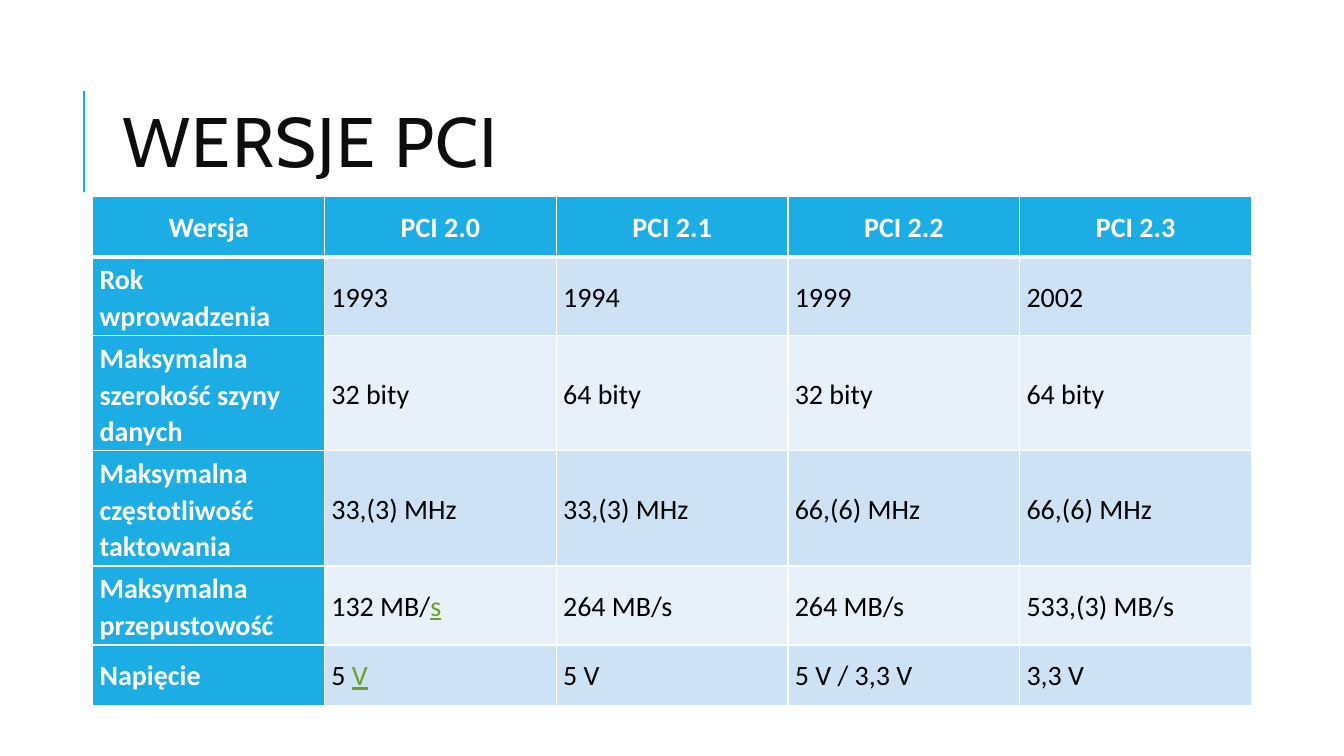
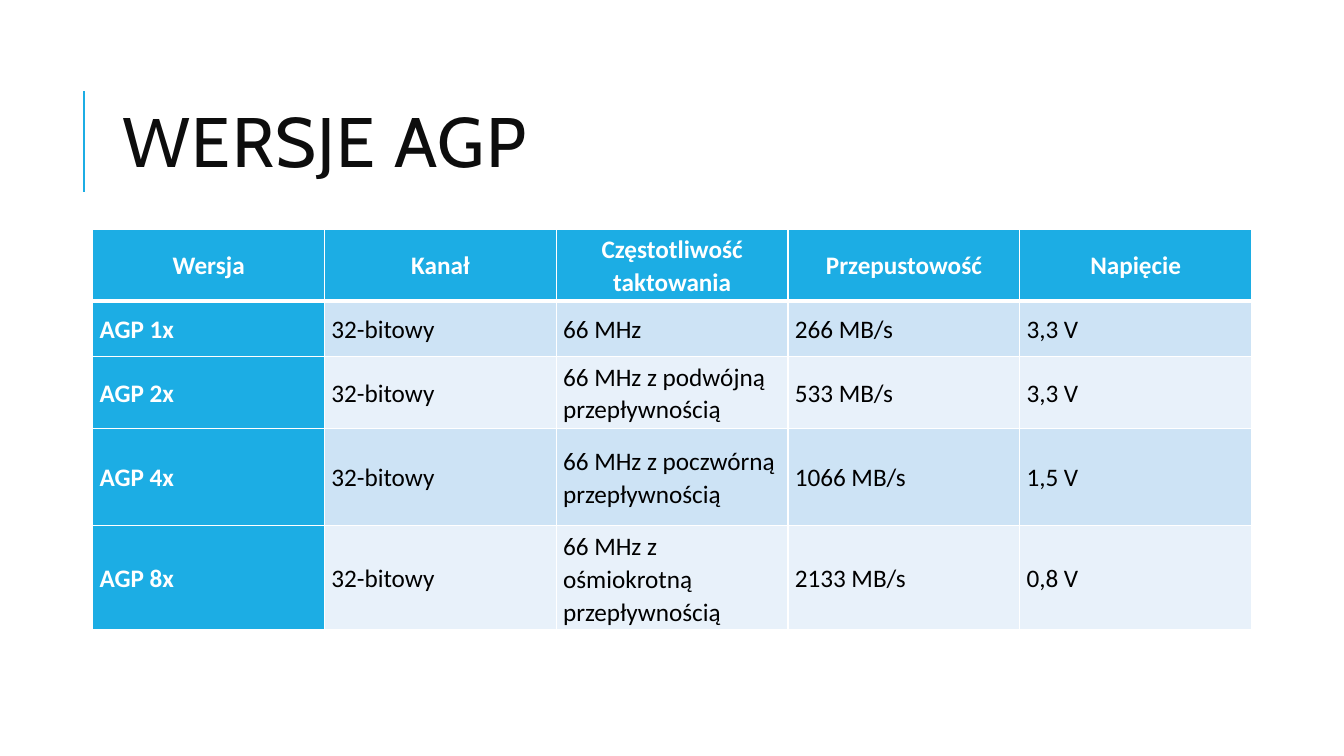
from dataclasses import dataclass

from lxml import etree
from pptx import Presentation
from pptx.dml.color import RGBColor as Rgb
from pptx.enum.shapes import MSO_CONNECTOR as Connector
from pptx.enum.text import MSO_ANCHOR as Anchor, PP_ALIGN as Align
from pptx.oxml.ns import qn
from pptx.util import Cm, Pt


@dataclass(frozen=True)
class Theme:
    accent: str = "1CADE4"
    title: str = "0D0D0D"
    body: str = "000000"
    white: str = "FFFFFF"
    marked: str = "6B9F25"
    bands: tuple = ("CDE3F5", "E8F1FA")
    title_font: str = "Cabin"
    table_font: str = "Calibri"
    title_size: int = 50


THEME = Theme()

# A tuple in a cell holds plain text followed by underlined text.
PCI_ROWS = [
    ["Wersja", "PCI 2.0", "PCI 2.1", "PCI 2.2", "PCI 2.3"],
    ["Rok wprowadzenia", "1993", "1994", "1999", "2002"],
    ["Maksymalna szerokość szyny danych", "32 bity", "64 bity", "32 bity", "64 bity"],
    ["Maksymalna częstotliwość taktowania",
     "33,(3) MHz", "33,(3) MHz", "66,(6) MHz", "66,(6) MHz"],
    ["Maksymalna przepustowość",
     ("132 MB/", "s"), "264 MB/s", "264 MB/s", "533,(3) MB/s"],
    ["Napięcie", ("5 ", "V"), "5 V", "5 V / 3,3 V", "3,3 V"],
]
AGP_ROWS = [
    ["Wersja", "Kanał", "Częstotliwość taktowania", "Przepustowość", "Napięcie"],
    ["AGP 1x", "32-bitowy", "66 MHz", "266 MB/s", "3,3 V"],
    ["AGP 2x", "32-bitowy", "66 MHz z podwójną przepływnością", "533 MB/s", "3,3 V"],
    ["AGP 4x", "32-bitowy", "66 MHz z poczwórną przepływnością", "1066 MB/s", "1,5 V"],
    ["AGP 8x", "32-bitowy", "66 MHz z ośmiokrotną przepływnością", "2133 MB/s", "0,8 V"],
]


def style_font(font, name, size, color, bold=False):
    font.name = name
    font.size = Pt(size)
    font.bold = bold
    font.color.rgb = Rgb.from_string(color)


def add_title_line(page):
    line = page.shapes.add_connector(Connector.STRAIGHT, Cm(2.11), Cm(4.83), Cm(2.11), Cm(2.29))
    line.line.color.rgb = Rgb.from_string(THEME.accent)
    line.line.width = Pt(1.5)
    etree.SubElement(line._element.spPr, qn("a:effectLst"))


def add_title(page, text):
    box = page.shapes.add_textbox(Cm(2.84), Cm(1.63), Cm(27), Cm(4.17))
    frame = box.text_frame
    frame.word_wrap = True
    frame.vertical_anchor = Anchor.MIDDLE
    para = frame.paragraphs[0]
    para.line_spacing = 0.8
    style_font(para.font, THEME.title_font, THEME.title_size, THEME.title)
    span = para.add_run()
    span.text = text
    span._r.get_or_add_rPr().set("spc", "100")


def set_borders(cell, bottom):
    """Draw white cell edges; bottom is the width of the lower one in points."""
    props = cell._tc.get_or_add_tcPr()
    widths = {"a:lnL": 1, "a:lnR": 1, "a:lnT": 1, "a:lnB": bottom}
    for position, (tag, width) in enumerate(widths.items()):
        edge = etree.Element(qn(tag), w=str(Pt(width)))
        fill = etree.SubElement(edge, qn("a:solidFill"))
        etree.SubElement(fill, qn("a:srgbClr"), val=THEME.white)
        props.insert(position, edge)


def fill_cell(cell, content, size, row, column):
    is_head = row == 0
    is_label = is_head or column == 0
    cell.vertical_anchor = Anchor.MIDDLE
    cell.margin_left = cell.margin_right = Cm(0.17)
    cell.margin_top = cell.margin_bottom = Cm(0.09)
    cell.fill.solid()
    cell.fill.fore_color.rgb = Rgb.from_string(
        THEME.accent if is_label else THEME.bands[(row - 1) % 2])
    set_borders(cell, bottom=3 if is_head else 1)

    para = cell.text_frame.paragraphs[0]
    para.alignment = Align.CENTER if is_head else Align.LEFT
    para.line_spacing = 1.07
    para.space_before = para.space_after = Pt(12)
    style_font(para.font, THEME.table_font, size,
               THEME.white if is_label else THEME.body, is_label)
    plain, marked = content if isinstance(content, tuple) else (content, "")
    para.add_run().text = plain
    if marked:
        span = para.add_run()
        span.text = marked
        span.font.underline = True
        span.font.color.rgb = Rgb.from_string(THEME.marked)


def add_version_table(page, rows, top, heights, size):
    """Add a table whose top and row heights are in centimetres."""
    column_width = Cm(5.84)
    column_count = len(rows[0])
    table = page.shapes.add_table(
        len(rows), column_count, Cm(2.34), Cm(top),
        column_width * column_count, Cm(sum(heights))).table
    table.first_col = True
    table.horz_banding = False
    for column in table.columns:
        column.width = column_width
    for row, (contents, height) in enumerate(zip(rows, heights)):
        table.rows[row].height = Cm(height)
        for column, content in enumerate(contents):
            fill_cell(table.cell(row, column), content, size, row, column)


def add_version_page(deck, title, rows, top, heights, size):
    page = deck.slides.add_slide(deck.slide_layouts[6])
    add_title_line(page)
    add_title(page, title)
    add_version_table(page, rows, top, heights, size)


def main():
    deck = Presentation()
    deck.slide_width, deck.slide_height = Cm(33.87), Cm(19.05)
    add_version_page(deck, "WERSJE PCI", PCI_ROWS, top=4.95,
                     heights=[1.52, 1.52, 2.69, 2.69, 1.52, 1.52], size=20)
    add_version_page(deck, "WERSJE AGP", AGP_ROWS, top=5.77,
                     heights=[1.4, 1.4, 1.4, 2.46, 2.46], size=18)
    deck.save("out.pptx")


if __name__ == "__main__":
    main()
